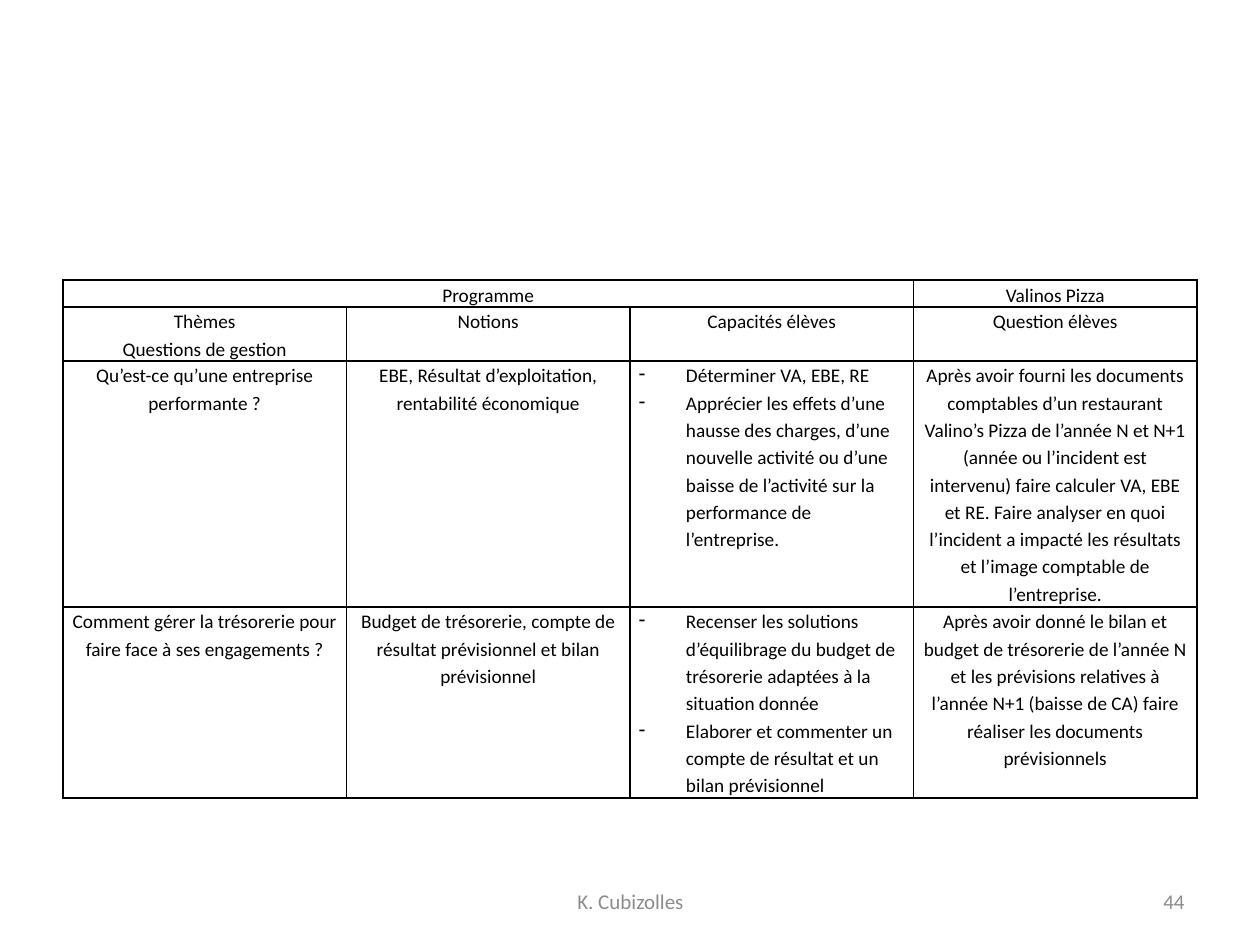
"""Build a slide with a table linking a management syllabus to a case study."""
from itertools import product

from pptx import Presentation
from pptx.dml.color import RGBColor
from pptx.enum.text import MSO_ANCHOR, PP_ALIGN
from pptx.oxml.ns import qn
from pptx.util import Emu, Pt
from lxml.etree import SubElement

THEME = {
    "font": "Calibri",
    "ink": RGBColor(0x00, 0x00, 0x00),
    "muted": RGBColor(0x8C, 0x8C, 0x8C),
    "paper": RGBColor(0xFF, 0xFF, 0xFF),
    "table_size": Pt(11),
    "footer_size": Pt(12),
    "border": Pt(1),
}

BULLET = "- "
ROWS = [
    [["Programme"], [], [], ["Valinos Pizza"]],
    [["Thèmes", "Questions de gestion"], ["Notions"], ["Capacités élèves"], ["Question élèves"]],
    [
        ["Qu’est-ce qu’une entreprise performante ?"],
        ["EBE, Résultat d’exploitation, rentabilité économique"],
        [
            "- Déterminer VA, EBE, RE",
            "- Apprécier les effets d’une hausse des charges, d’une nouvelle activité ou "
            "d’une baisse de l’activité sur la performance de l’entreprise.",
        ],
        [
            "Après avoir fourni les documents comptables d’un restaurant Valino’s Pizza de "
            "l’année N et N+1 (année ou l’incident est intervenu) faire calculer VA, EBE et RE. "
            "Faire analyser en quoi l’incident a impacté les résultats et l’image comptable de "
            "l’entreprise."
        ],
    ],
    [
        ["Comment gérer la trésorerie pour faire face à ses engagements ?"],
        ["Budget de trésorerie, compte de résultat prévisionnel et bilan prévisionnel"],
        [
            "- Recenser les solutions d’équilibrage du budget de trésorerie adaptées à la "
            "situation donnée",
            "- Elaborer et commenter un compte de résultat et un bilan prévisionnel",
        ],
        [
            "Après avoir donné le bilan et budget de trésorerie de l’année N et les prévisions "
            "relatives à l’année N+1 (baisse de CA) faire réaliser les documents prévisionnels"
        ],
    ],
]
ROW_HEIGHTS = [27, 54, 246, 191]
TABLE_LEFT, TABLE_TOP, TABLE_WIDTH = 63, 280, 1134
CELL_INSET, BULLET_INDENT = 9, 47

FOOTER_TOP, FOOTER_HEIGHT = 876, 50
FOOTERS = [
    ("K. Cubizolles", 431, 399, PP_ALIGN.CENTER),
    ("44", 903, 294, PP_ALIGN.RIGHT),
]


def px(n):
    return Emu(round(n * 914400 / 126))


def style(p, size, color, align):
    p.alignment = align
    for r in p.runs:
        r.font.name = THEME["font"]
        r.font.size = size
        r.font.color.rgb = color


def add_borders(cell):
    tc_pr = cell._tc.get_or_add_tcPr()
    for side in ("a:lnL", "a:lnR", "a:lnT", "a:lnB"):
        ln = SubElement(tc_pr, qn(side), w=str(THEME["border"]))
        fill = SubElement(ln, qn("a:solidFill"))
        SubElement(fill, qn("a:srgbClr"), val=str(THEME["ink"]))


def fill_cell(cell, lines):
    add_borders(cell)
    cell.fill.solid()
    cell.fill.fore_color.rgb = THEME["paper"]
    cell.margin_left = cell.margin_right = px(CELL_INSET)
    cell.margin_top = cell.margin_bottom = 0
    tf = cell.text_frame
    tf.text = "\n".join(line.removeprefix(BULLET) for line in lines)
    for p, line in zip(tf.paragraphs, lines):
        align = PP_ALIGN.CENTER
        if line.startswith(BULLET):
            align = PP_ALIGN.LEFT
            p_pr = p._p.get_or_add_pPr()
            p_pr.set("marL", str(px(BULLET_INDENT)))
            p_pr.set("indent", str(-px(BULLET_INDENT)))
            SubElement(p_pr, qn("a:buChar"), char=BULLET.strip())
        p.line_spacing = 1.15
        style(p, THEME["table_size"], THEME["ink"], align)


def add_programme_table(s):
    n_rows, n_cols = len(ROWS), len(ROWS[0])
    frame = s.shapes.add_table(n_rows, n_cols, px(TABLE_LEFT), px(TABLE_TOP),
                               px(TABLE_WIDTH), px(sum(ROW_HEIGHTS)))
    table = frame.table
    table.first_row = table.horz_banding = False
    for column in table.columns:
        column.width = px(TABLE_WIDTH / n_cols)
    for row, height in zip(table.rows, ROW_HEIGHTS):
        row.height = px(height)
    for i, j in product(range(n_rows), range(n_cols)):
        fill_cell(table.cell(i, j), ROWS[i][j])
    table.cell(0, 0).merge(table.cell(0, n_cols - 2))


def add_footer(s, text, left, width, align):
    sp = s.shapes.add_textbox(px(left), px(FOOTER_TOP), px(width), px(FOOTER_HEIGHT))
    tf = sp.text_frame
    tf.word_wrap = True
    tf.vertical_anchor = MSO_ANCHOR.MIDDLE
    tf.text = text
    style(tf.paragraphs[0], THEME["footer_size"], THEME["muted"], align)


def main():
    prs = Presentation()
    prs.slide_width, prs.slide_height = px(1260), px(945)
    s = prs.slides.add_slide(prs.slide_layouts[6])
    for footer in FOOTERS:
        add_footer(s, *footer)
    add_programme_table(s)
    prs.save("out.pptx")


if __name__ == "__main__":
    main()
